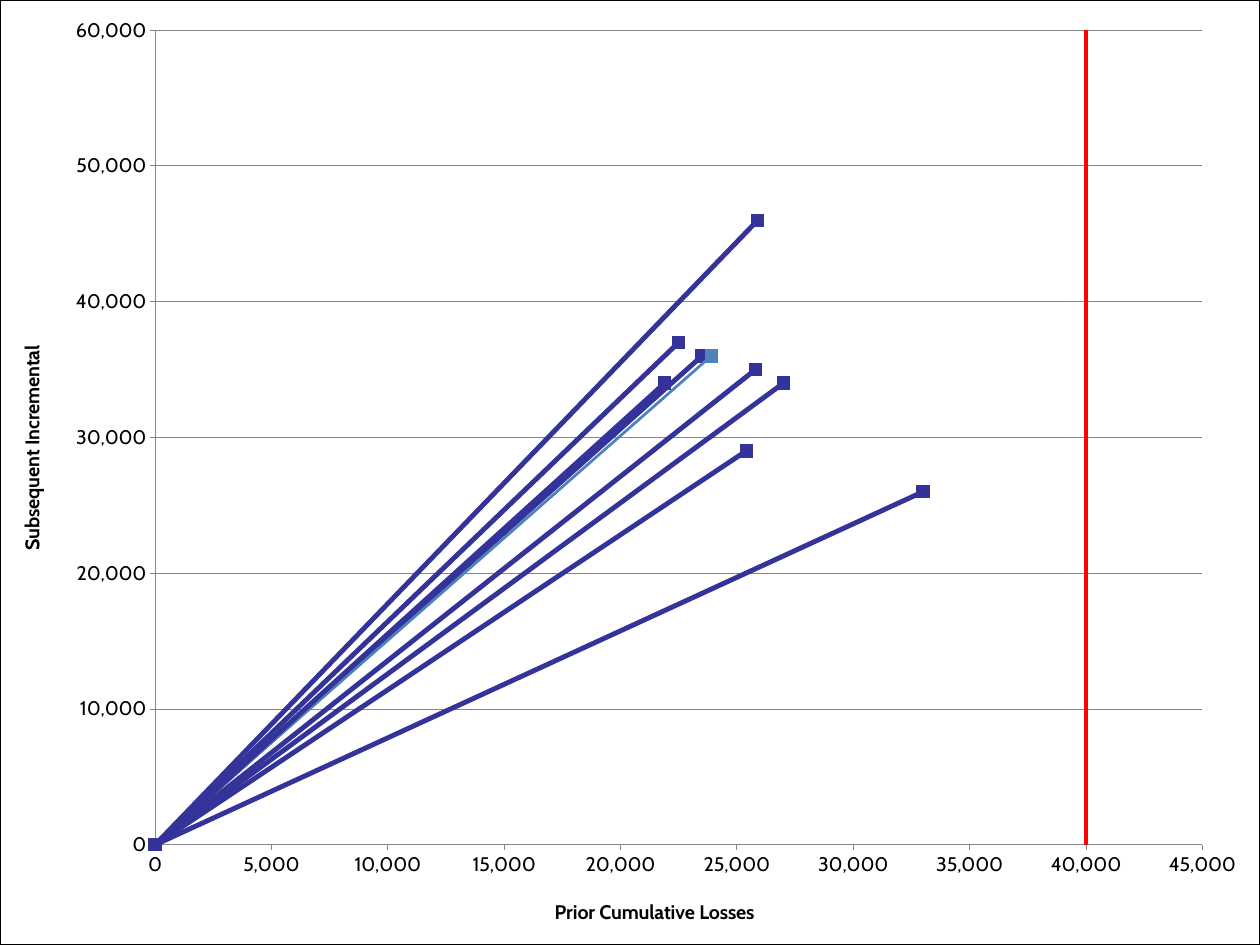
from dataclasses import dataclass

from lxml import etree
from pptx import Presentation
from pptx.chart.data import XyChartData
from pptx.dml.color import RGBColor
from pptx.enum.chart import XL_CHART_TYPE, XL_MARKER_STYLE, XL_TICK_MARK
from pptx.enum.shapes import MSO_SHAPE
from pptx.oxml.ns import qn
from pptx.util import Inches, Pt

SCATTER = XL_CHART_TYPE.XY_SCATTER_LINES
SQUARE = XL_MARKER_STYLE.SQUARE
NO_MARKER = XL_MARKER_STYLE.NONE
OUTSIDE = XL_TICK_MARK.OUTSIDE
NO_TICK = XL_TICK_MARK.NONE
RECTANGLE = MSO_SHAPE.RECTANGLE


@dataclass(frozen=True)
class Theme:
    font: str = "Cabin"
    text: RGBColor = RGBColor(0, 0, 0)
    paper: RGBColor = RGBColor(255, 255, 255)
    grid: RGBColor = RGBColor(0x86, 0x86, 0x86)
    ray: RGBColor = RGBColor(0x33, 0x33, 0x99)
    average: RGBColor = RGBColor(0x4F, 0x81, 0xBD)
    limit: RGBColor = RGBColor(255, 0, 0)
    size: Pt = Pt(16)
    border: Pt = Pt(2)
    thin: Pt = Pt(0.75)
    medium: Pt = Pt(2.25)
    thick: Pt = Pt(4)
    marker: int = 10


THEME = Theme()
WIDTH, HEIGHT = Inches(14.22), Inches(10.67)
LOSSES = [
    (21900, 34000),
    (22500, 37000),
    (23900, 36000),
    (25900, 46000),
    (23500, 36000),
    (27000, 34000),
    (25800, 35000),
    (25400, 29000),
    (33000, 26000),
]
AVERAGE_INDEX = 2
CURRENT_LOSS = 40000
X_MAX, Y_MAX = 45000, 60000


def add_frame(slide):
    sp = slide.shapes.add_shape(RECTANGLE, 0, 0, WIDTH, HEIGHT)
    sp.shadow.inherit = False
    sp.fill.solid()
    sp.fill.fore_color.rgb = THEME.paper
    set_line(sp.line, THEME.text, THEME.border)


def set_line(line, color, width):
    line.color.rgb = color
    line.width = width


def place(element, index, left, top, width=None, height=None):
    layout = element.find(qn("c:layout"))
    if layout is None:
        layout = etree.Element(qn("c:layout"))
        element.insert(index, layout)
    manual = etree.SubElement(layout, qn("c:manualLayout"))
    fractions = {"x": left / WIDTH, "y": top / HEIGHT}
    if width is not None:
        etree.SubElement(manual, qn("c:layoutTarget")).set("val", "inner")
        fractions.update(w=width / WIDTH, h=height / HEIGHT)
    for key in ("x", "y"):
        etree.SubElement(manual, qn(f"c:{key}Mode")).set("val", "edge")
    for key, value in fractions.items():
        etree.SubElement(manual, qn(f"c:{key}")).set("val", str(value))


def format_axis(axis, title, maximum, step, left, top, rotation):
    axis.minimum_scale, axis.maximum_scale = 0, maximum
    axis.major_unit = step
    axis.major_tick_mark, axis.minor_tick_mark = OUTSIDE, NO_TICK
    axis.tick_labels.number_format = "#,##0"
    axis.tick_labels.number_format_is_linked = False
    axis.tick_labels.font.size = THEME.size
    set_line(axis.format.line, THEME.grid, THEME.thin)
    tf = axis.axis_title.text_frame
    tf.text = title
    font = tf.paragraphs[0].font
    font.name, font.size, font.bold = THEME.font, THEME.size, True
    font.color.rgb = THEME.text
    tf._txBody.bodyPr.set("rot", str(rotation * 60000))
    place(axis.axis_title._element, 1, left, top)


def format_series(series, color, width, has_marker=True):
    series.smooth = False
    set_line(series.format.line, color, width)
    marker = series.marker
    marker.style = SQUARE if has_marker else NO_MARKER
    if has_marker:
        marker.size = THEME.marker
        marker.format.fill.solid()
        marker.format.fill.fore_color.rgb = color
        set_line(marker.format.line, color, THEME.thin)


def loss_data():
    data = XyChartData(number_format="#,##0")
    lines = [(point, (0, 0)) for point in LOSSES]
    lines.append(((CURRENT_LOSS, Y_MAX), (CURRENT_LOSS, 0)))
    for number, points in enumerate(lines, 1):
        series = data.add_series(f"Series {number}")
        for x, y in points:
            series.add_data_point(x, y)
    return data


def add_loss_chart(slide):
    chart = slide.shapes.add_chart(SCATTER, 0, 0, WIDTH, HEIGHT, loss_data()).chart
    chart.has_title = chart.has_legend = False
    chart.font.name, chart.font.size = THEME.font, THEME.size
    chart.font.color.rgb = THEME.text
    plot = chart.plots[0]
    plot.vary_by_categories = False
    format_axis(chart.category_axis, "Prior Cumulative Losses", X_MAX, 5000,
                Inches(6.22), Inches(10.11), 0)
    format_axis(chart.value_axis, "Subsequent Incremental", Y_MAX, 10000,
                Inches(0.17), Inches(3.86), -90)
    chart.category_axis.has_major_gridlines = False
    chart.value_axis.has_major_gridlines = True
    set_line(chart.value_axis.major_gridlines.format.line, THEME.grid, THEME.thin)
    *rays, limit = plot.series
    for index, series in enumerate(rays):
        if index == AVERAGE_INDEX:
            format_series(series, THEME.average, THEME.medium)
        else:
            format_series(series, THEME.ray, THEME.thick)
    format_series(limit, THEME.limit, THEME.thick, has_marker=False)
    plot_area = chart._chartSpace.find(".//" + qn("c:plotArea"))
    place(plot_area, 0, Inches(1.75), Inches(0.34), Inches(11.82), Inches(9.2))


def main():
    prs = Presentation()
    prs.slide_width, prs.slide_height = WIDTH, HEIGHT
    slide = prs.slides.add_slide(prs.slide_layouts[6])
    add_frame(slide)
    add_loss_chart(slide)
    prs.save("out.pptx")


if __name__ == "__main__":
    main()
